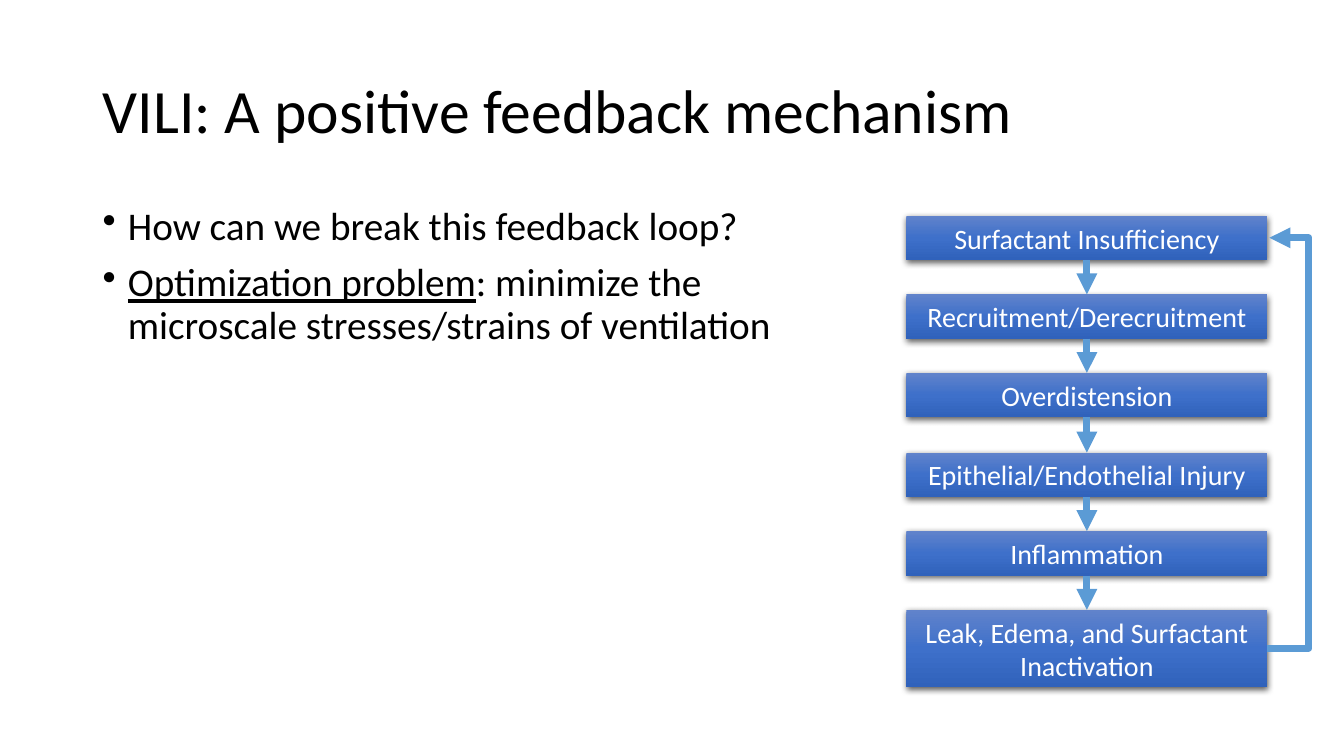
from copy import deepcopy

from lxml import etree
from pptx import Presentation
from pptx import util as u
from pptx.dml.color import RGBColor
from pptx.enum import shapes, text
from pptx.oxml import ns

PX = 9144  # EMU per px, 100 px to the inch
FONT = "Calibri"
BLACK = RGBColor(0x00, 0x00, 0x00)
WHITE = RGBColor(0xFF, 0xFF, 0xFF)
ARROW = RGBColor(0x5B, 0x9B, 0xD5)
SHADES = (
    RGBColor(0x61, 0x83, 0xCB),
    RGBColor(0x3E, 0x70, 0xCA),
    RGBColor(0x30, 0x62, 0xBB),
)

STEPS = (
    "Surfactant Insufficiency",
    "Recruitment/Derecruitment",
    "Overdistension",
    "Epithelial/Endothelial Injury",
    "Inflammation",
    "Leak, Edema, and Surfactant Inactivation",
)
POINTS = (
    (("How can we break this feedback loop?", False),),
    (
        ("Optimization problem", True),
        (": minimize the microscale stresses/strains of ventilation", False),
    ),
)
LEFT, WIDE = 899, 358
TOP, LAST = 214, 605
LOW, TALL = 44, 77


def px(*vals):
    return [u.Emu(val * PX) for val in vals]


def node(parent, tag, **attrs):
    return etree.SubElement(parent, ns.qn(tag), **attrs)


def style(para, size, color, align):
    para.font.name = FONT
    para.font.size = u.Pt(size)
    para.font.color.rgb = color
    para.alignment = align


def add_title(slide, words):
    title = slide.shapes.title
    title.left, title.top, title.width, title.height = px(92, 40, 1150, 145)
    frame = title.text_frame
    frame.text = words
    frame.vertical_anchor = text.MSO_ANCHOR.MIDDLE
    para = frame.paragraphs[0]
    para.line_spacing = 0.9
    style(para, 44, BLACK, text.PP_ALIGN.LEFT)


def add_points(slide, points):
    frame = slide.shapes.add_textbox(*px(92, 200, 768, 509)).text_frame
    frame.word_wrap = True
    for i, runs in enumerate(points):
        para = frame.add_paragraph() if i else frame.paragraphs[0]
        for words, lined in runs:
            run = para.add_run()
            run.text = words
            if lined:
                run.font.underline = True
        para.line_spacing = 0.9
        para.space_before = u.Pt(10)
        style(para, 28, BLACK, text.PP_ALIGN.LEFT)
        # Hanging bullet
        props = para._p.get_or_add_pPr()
        props.set("marL", str(25 * PX))
        props.set("indent", str(-25 * PX))
        bullet = etree.Element(ns.qn("a:buChar"), char="•")
        props.find(ns.qn("a:defRPr")).addprevious(bullet)


def shade(box):
    # Gradient from top to bottom
    box.fill.gradient()
    box.fill.gradient_angle = 270
    stops = box._element.spPr.find(".//" + ns.qn("a:gsLst"))
    stops.append(deepcopy(stops[0]))
    for i, stop in enumerate(box.fill.gradient_stops):
        stop.position = i / 2
        stop.color.rgb = SHADES[i]
    # Soft shadow below
    box.shadow.inherit = False
    effects = box._element.spPr.find(ns.qn("a:effectLst"))
    cast = node(effects, "a:outerShdw", blurRad=str(u.Pt(4.5)),
                dist=str(u.Pt(1.5)), dir="5400000", algn="ctr",
                rotWithShape="0")
    node(node(cast, "a:srgbClr", val="000000"), "a:alpha", val="63000")


def add_step(slide, words, top, high):
    box = slide.shapes.add_shape(
        shapes.MSO_SHAPE.RECTANGLE, *px(LEFT, top, WIDE, high))
    box.line.fill.background()
    shade(box)
    frame = box.text_frame
    frame.word_wrap = True
    frame.text = words
    style(frame.paragraphs[0], 20, WHITE, text.PP_ALIGN.CENTER)


def add_arrow(slide, kind, *ends):
    arrow = slide.shapes.add_connector(kind, *px(*ends))
    arrow.line.color.rgb = ARROW
    arrow.line.width = u.Pt(5)
    node(arrow.line._get_or_add_ln(), "a:tailEnd", type="triangle")
    node(arrow._element.spPr, "a:effectLst")
    return arrow


def add_loop(slide, start, end):
    right = LEFT + WIDE
    gap, reach = 2, 41
    loop = add_arrow(slide, shapes.MSO_CONNECTOR.ELBOW,
                     right, start, right + gap, end)
    # Bend lies beyond the right end
    guides = loop._element.spPr.find(".//" + ns.qn("a:avLst"))
    node(guides, "a:gd", name="adj1", fmla=f"val {reach * 100000 // gap}")


def main():
    deck = Presentation()
    deck.slide_width, deck.slide_height = px(1333, 750)
    slide = deck.slides.add_slide(deck.slide_layouts[5])
    add_title(slide, "VILI: A positive feedback mechanism")
    add_points(slide, POINTS)

    # Chain of steps
    count = len(STEPS)
    tops = [round(TOP + i * (LAST - TOP) / (count - 1)) for i in range(count)]
    for words, top in zip(STEPS, tops):
        add_step(slide, words, top, TALL if top == LAST else LOW)

    # Arrows down and back to the start
    mid = LEFT + WIDE // 2
    for top, below in zip(tops, tops[1:]):
        add_arrow(slide, shapes.MSO_CONNECTOR.STRAIGHT,
                  mid, top + LOW, mid, below)
    add_loop(slide, LAST + TALL // 2, TOP + LOW // 2)
    deck.save("out.pptx")


if __name__ == "__main__":
    main()
